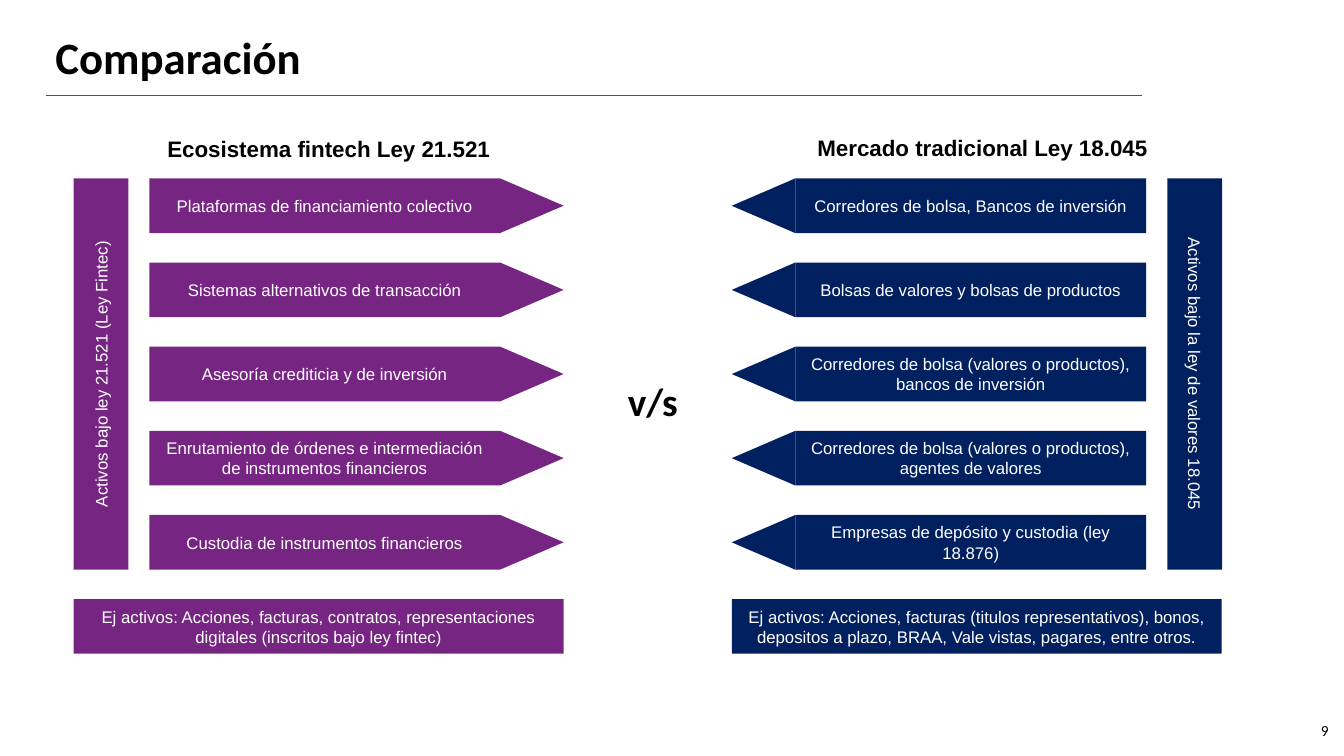
"""Build the slide that compares the fintech ecosystem with the traditional market."""
from dataclasses import dataclass

from lxml import etree
from pptx import Presentation
from pptx.dml.color import RGBColor
from pptx.enum.shapes import MSO_CONNECTOR, MSO_SHAPE
from pptx.enum.text import MSO_ANCHOR, MSO_AUTO_SIZE, PP_ALIGN
from pptx.oxml.ns import qn
from pptx.slide import Slide
from pptx.text.text import TextFrame
from pptx.util import Pt

RECTANGLE, TRIANGLE = MSO_SHAPE.RECTANGLE, MSO_SHAPE.ISOSCELES_TRIANGLE
STRAIGHT = MSO_CONNECTOR.STRAIGHT
TOP, MIDDLE = MSO_ANCHOR.TOP, MSO_ANCHOR.MIDDLE
LEFT, CENTER, RIGHT = PP_ALIGN.LEFT, PP_ALIGN.CENTER, PP_ALIGN.RIGHT
NO_FIT = MSO_AUTO_SIZE.NONE


@dataclass(frozen=True)
class Theme:
    purple: str = "772583"
    navy: str = "002060"
    rule: str = "2F5597"
    black: str = "000000"
    white: str = "FFFFFF"
    body_font: str = "Arial"
    title_font: str = "Calibri"
    title_size: float = 32
    versus_size: float = 28
    heading_size: float = 16
    label_size: float = 12
    number_size: float = 11


@dataclass(frozen=True)
class Area:
    left: float
    top: float
    width: float
    height: float


@dataclass(frozen=True)
class Style:
    font: str
    size: float
    color: str
    bold: bool = False
    align: PP_ALIGN = LEFT
    anchor: MSO_ANCHOR = TOP


@dataclass(frozen=True)
class Market:
    heading: str
    heading_area: Area
    color: str
    bar_text: str
    bar_left: float
    bar_turn: int
    row_left: float
    tip_left: float
    tip_turn: int
    assets_left: float
    assets: str
    rows: tuple[str, ...]


THEME = Theme()
TITLE = Style(THEME.title_font, THEME.title_size, THEME.black, True, LEFT, MIDDLE)
VERSUS = Style(THEME.title_font, THEME.versus_size, THEME.black, True)
HEADING = Style(THEME.body_font, THEME.heading_size, THEME.black, True)
LABEL = Style(THEME.body_font, THEME.label_size, THEME.white, False, CENTER, MIDDLE)
NUMBER = Style(THEME.title_font, THEME.number_size, THEME.black, False, RIGHT, MIDDLE)

ROW_TOP, ROW_STEP, ROW_COUNT = 127.4, 60.1, 5
ROW_WIDTH, TIP_WIDTH, THICKNESS = 250.6, 45.4, 39.1
BAR_HEIGHT = ROW_STEP * (ROW_COUNT - 1) + THICKNESS
ASSETS_TOP = ROW_TOP + ROW_STEP * ROW_COUNT
ASSETS_WIDTH = 350

MARKETS = (
    Market(
        "Ecosistema fintech Ley 21.521", Area(112.4, 93.1, 248.4, 26.6), THEME.purple,
        "Activos bajo ley 21.521 (Ley Fintec)", 52.6, 270, 106.6, 357.2, 90, 52.6,
        "Ej activos: Acciones, facturas, contratos, representaciones digitales "
        "(inscritos bajo ley fintec)",
        (
            "Plataformas de financiamiento colectivo",
            "Sistemas alternativos de transacción",
            "Asesoría crediticia y de inversión",
            "Enrutamiento de órdenes e intermediación de instrumentos financieros",
            "Custodia de instrumentos financieros",
        ),
    ),
    Market(
        "Mercado tradicional Ley 18.045", Area(576.7, 92.2, 253.4, 26.6), THEME.navy,
        "Activos bajo la ley de valores 18.045", 833.8, 90, 568.1, 522.7, 270, 522.7,
        "Ej activos: Acciones, facturas (titulos representativos), bonos, "
        "depositos a plazo, BRAA, Vale vistas, pagares, entre otros.",
        (
            "Corredores de bolsa, Bancos de inversión",
            "Bolsas de valores y bolsas de productos",
            "Corredores de bolsa (valores o productos), bancos de inversión",
            "Corredores de bolsa (valores o productos), agentes de valores",
            "Empresas de depósito y custodia (ley 18.876)",
        ),
    ),
)


def write(frame: TextFrame, text: str, style: Style, wrap: bool = True) -> None:
    """Put styled text in a frame."""
    frame.text = text
    frame.word_wrap = wrap
    frame.auto_size = NO_FIT
    frame.vertical_anchor = style.anchor
    para = frame.paragraphs[0]
    para.alignment = style.align
    font = para.runs[0].font
    font.name, font.size, font.bold = style.font, Pt(style.size), style.bold
    font.color.rgb = RGBColor.from_string(style.color)


def add_block(page: Slide, kind: MSO_SHAPE, area: Area, color: str,
              text: str = "", turn: int = 0) -> None:
    """Draw a filled shape that covers the area after its quarter turn."""
    width, height = (area.height, area.width) if turn else (area.width, area.height)
    left = area.left + (area.width - width) / 2
    top = area.top + (area.height - height) / 2
    block = page.shapes.add_shape(kind, Pt(left), Pt(top), Pt(width), Pt(height))
    block.rotation = turn
    block.shadow.inherit = False
    block.fill.solid()
    block.fill.fore_color.rgb = RGBColor.from_string(color)
    block.line.fill.background()
    if text:
        write(block.text_frame, text, LABEL)


def add_text(page: Slide, area: Area, text: str, style: Style, wrap: bool = True) -> None:
    """Add a text box."""
    box = page.shapes.add_textbox(Pt(area.left), Pt(area.top), Pt(area.width), Pt(area.height))
    write(box.text_frame, text, style, wrap)


def add_title(page: Slide) -> None:
    """Place the title and the rule under it."""
    title = page.shapes.title
    title.left, title.top, title.width, title.height = Pt(32.4), Pt(23), Pt(782.6), Pt(39.6)
    write(title.text_frame, "Comparación", TITLE)
    title.text_frame.paragraphs[0].line_spacing = 0.9
    rule = page.shapes.add_connector(STRAIGHT, Pt(32.8), Pt(68.4), Pt(815.8), Pt(68.4))
    rule.line.color.rgb = RGBColor.from_string(THEME.rule)
    rule.line.width = Pt(0.75)
    etree.SubElement(rule._element.spPr, qn("a:effectLst"))


def add_market(page: Slide, market: Market) -> None:
    """Draw one side of the comparison."""
    add_text(page, market.heading_area, market.heading, HEADING, wrap=False)
    for index, text in enumerate(market.rows):
        top = ROW_TOP + index * ROW_STEP
        add_block(page, RECTANGLE, Area(market.row_left, top, ROW_WIDTH, THICKNESS),
                  market.color, text)
        add_block(page, TRIANGLE, Area(market.tip_left, top, TIP_WIDTH, THICKNESS),
                  market.color, turn=market.tip_turn)
    add_block(page, RECTANGLE, Area(market.bar_left, ROW_TOP, THICKNESS, BAR_HEIGHT),
              market.color, market.bar_text, market.bar_turn)
    add_block(page, RECTANGLE, Area(market.assets_left, ASSETS_TOP, ASSETS_WIDTH, THICKNESS),
              market.color, market.assets)


def main() -> None:
    """Build and save the deck."""
    deck = Presentation()
    deck.slide_width, deck.slide_height = Pt(960), Pt(540)
    page = deck.slides.add_slide(deck.slide_layouts.get_by_name("Title Only"))
    add_title(page)
    for market in MARKETS:
        add_market(page, market)
    add_text(page, Area(441.4, 265.7, 72, 41.2), "v/s", VERSUS)
    add_text(page, Area(873.4, 507.6, 82.8, 28.8), "9", NUMBER)
    deck.save("out.pptx")


if __name__ == "__main__":
    main()
